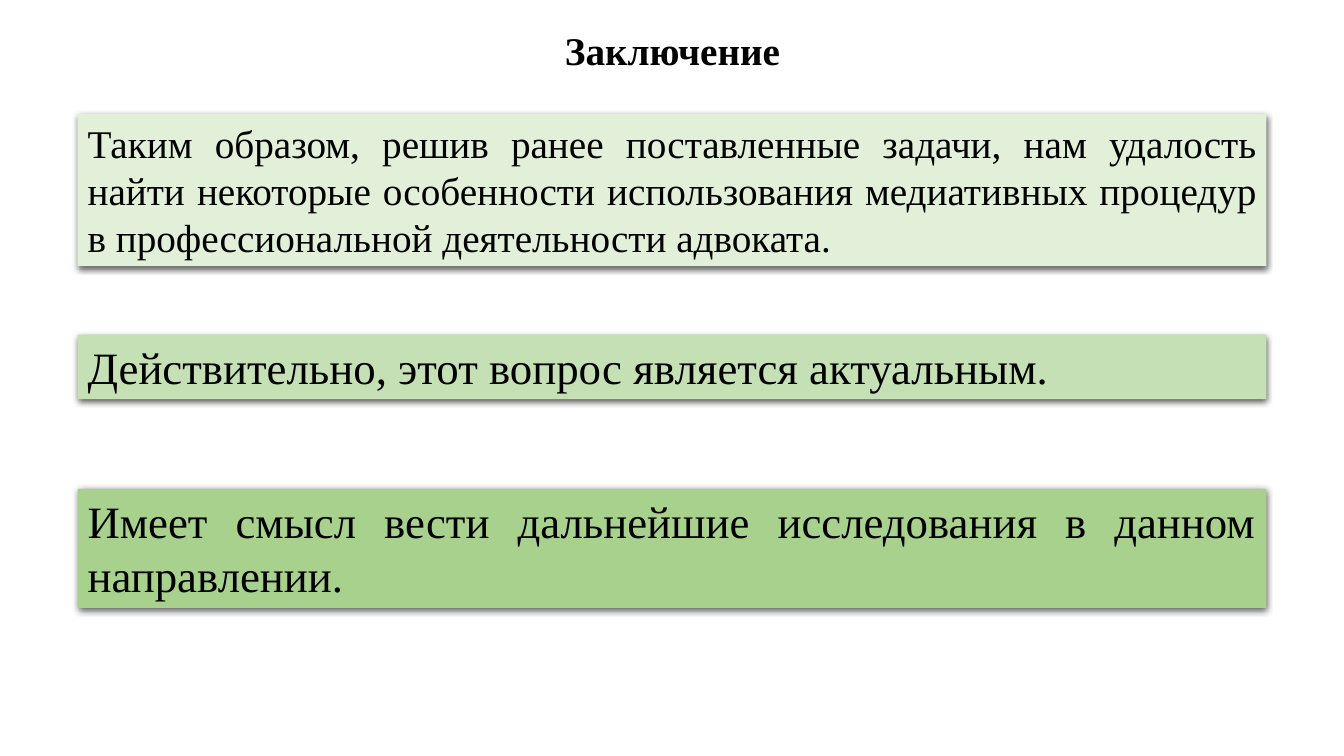
from lxml import etree
from pptx import Presentation, util as u
from pptx.dml.color import RGBColor
from pptx.enum import shapes, text
from pptx.oxml import parse_xml
from pptx.oxml.ns import nsdecls

FONT = "Times New Roman"
BLACK = RGBColor(0x00, 0x00, 0x00)
PALE_GREEN = RGBColor(0xE2, 0xF0, 0xD9)
LIGHT_GREEN = RGBColor(0xC5, 0xE0, 0xB4)
MID_GREEN = RGBColor(0xA9, 0xD1, 0x8E)

WIDTH, HEIGHT = u.Inches(13.33), u.Inches(7.5)
PANEL_LEFT, PANEL_WIDTH = u.Inches(0.77), u.Inches(11.79)

# top and height in inches, fill, text size, wording
CONCLUSIONS = [
    (1.13, 1.51, PALE_GREEN, 28,
     "Таким образом, решив ранее поставленные задачи, нам удалость найти "
     "некоторые особенности использования медиативных процедур в "
     "профессиональной деятельности адвоката."),
    (3.32, 0.64, LIGHT_GREEN, 32,
     "Действительно, этот вопрос является актуальным."),
    (4.85, 1.18, MID_GREEN, 32,
     "Имеет смысл вести дальнейшие исследования в данном направлении."),
]


def write(frame, wording, size, align, anchor, bold=False):
    frame.word_wrap = True
    frame.vertical_anchor = anchor
    frame.text = wording
    paragraph = frame.paragraphs[0]
    paragraph.alignment = align
    font = paragraph.runs[0].font
    font.name, font.size, font.bold = FONT, u.Pt(size), bold
    font.color.rgb = BLACK
    return paragraph


def add_soft_shadow(panel):
    """Cast a blurred black shadow straight down."""
    panel.shadow.inherit = False
    effects = panel.fill._xPr.find(
        "{http://schemas.openxmlformats.org/drawingml/2006/main}effectLst")
    effects.append(parse_xml(
        f'<a:outerShdw {nsdecls("a")} blurRad="{u.Pt(4.5)}" dist="{u.Pt(1.5)}" '
        'dir="5400000" algn="ctr" rotWithShape="0">'
        '<a:srgbClr val="000000"><a:alpha val="63000"/></a:srgbClr>'
        '</a:outerShdw>'))


def add_title(slide, left, top, width, height):
    title = slide.shapes.add_textbox(left, top, width, height)
    heading = write(title.text_frame, "Заключение", 28, text.PP_ALIGN.CENTER,
                    text.MSO_ANCHOR.MIDDLE, bold=True)
    heading.line_spacing = 0.9


def add_conclusion(slide, left, top, width, height, fill, size, wording):
    panel = slide.shapes.add_shape(
        shapes.MSO_SHAPE.RECTANGLE, left, top, width, height)
    panel.fill.solid()
    panel.fill.fore_color.rgb = fill
    panel.line.fill.background()
    add_soft_shadow(panel)
    write(panel.text_frame, wording, size, text.PP_ALIGN.JUSTIFY,
          text.MSO_ANCHOR.TOP)
    panel.text_frame.auto_size = text.MSO_AUTO_SIZE.SHAPE_TO_FIT_TEXT


def main():
    deck = Presentation()
    deck.slide_width, deck.slide_height = WIDTH, HEIGHT
    slide = deck.slides.add_slide(deck.slide_layouts[6])
    add_title(slide, u.Inches(0.92), 0, u.Inches(11.5), u.Inches(1.04))
    for top, height, fill, size, wording in CONCLUSIONS:
        add_conclusion(slide, PANEL_LEFT, u.Inches(top), PANEL_WIDTH,
                       u.Inches(height), fill, size, wording)
    deck.save("out.pptx")


if __name__ == "__main__":
    main()
